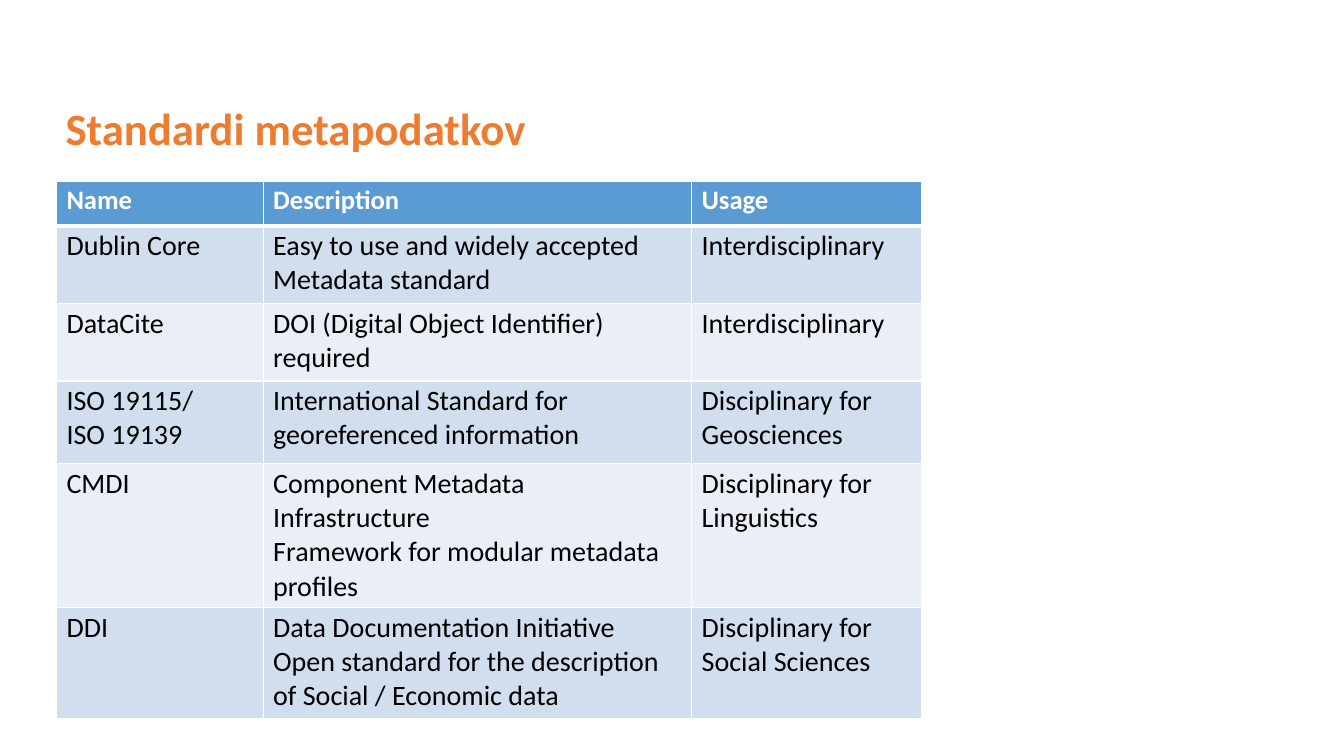
from typing import NamedTuple

import lxml.etree
import pptx
import pptx.dml.color
import pptx.enum.text
import pptx.oxml.ns
import pptx.table
import pptx.text.text
import pptx.util

Inches = pptx.util.Inches
Pt = pptx.util.Pt
RGBColor = pptx.dml.color.RGBColor

FONT = "Calibri"
ORANGE = RGBColor(0xEC, 0x7C, 0x30)
HEADER_BLUE = RGBColor(0x5B, 0x9B, 0xD4)
BAND_DARK = RGBColor(0xD0, 0xDE, 0xEE)
BAND_LIGHT = RGBColor(0xE9, 0xEE, 0xF7)
WHITE = RGBColor(0xFF, 0xFF, 0xFF)
BLACK = RGBColor(0, 0, 0)


class Column(NamedTuple):
    width: float
    right_margin: float


class Standard(NamedTuple):
    height: float
    name: str
    description: str
    usage: str


COLUMNS = [Column(2.05, 0.4), Column(4.25, 0.28), Column(2.28, 0)]
HEADINGS = Standard(0.44, "Name", "Description", "Usage")
STANDARDS = [
    Standard(0.77, "Dublin Core",
             "Easy to use and widely accepted Metadata standard", "Interdisciplinary"),
    Standard(0.77, "DataCite",
             "DOI (Digital Object Identifier)\nrequired", "Interdisciplinary"),
    Standard(0.82, "ISO 19115/ ISO 19139",
             "International Standard for georeferenced information",
             "Disciplinary for Geosciences"),
    Standard(1.43, "CMDI",
             "Component Metadata\nInfrastructure\nFramework for modular metadata profiles",
             "Disciplinary for\nLinguistics"),
    Standard(1.1, "DDI",
             "Data Documentation Initiative Open standard for the description "
             "of Social / Economic data",
             "Disciplinary for\nSocial Sciences"),
]


def style_text(frame: pptx.text.text.TextFrame, size: float, color: RGBColor, bold: bool) -> None:
    for paragraph in frame.paragraphs:
        paragraph.font.name = FONT
        paragraph.font.size = Pt(size)
        paragraph.font.bold = bold
        paragraph.font.color.rgb = color


def set_borders(cell: pptx.table._Cell, top: float, bottom: float) -> None:
    """Draw white borders; top and bottom are widths in points, the sides are 1 pt."""
    qn = pptx.oxml.ns.qn
    properties = cell._tc.get_or_add_tcPr()
    widths = {"a:lnL": 1, "a:lnR": 1, "a:lnT": top, "a:lnB": bottom}
    for position, (tag, width) in enumerate(widths.items()):
        line = lxml.etree.Element(qn(tag), w=str(Pt(width)))
        fill = lxml.etree.SubElement(line, qn("a:solidFill"))
        lxml.etree.SubElement(fill, qn("a:srgbClr"), val=str(WHITE))
        properties.insert(position, line)


def add_title(slide, text: str) -> None:
    title = slide.shapes.add_textbox(Inches(0.64), Inches(0.99), Inches(4.62), Inches(0.56))
    frame = title.text_frame
    frame.word_wrap = True
    frame.margin_left = frame.margin_top = Inches(0.01)
    frame.margin_right = frame.margin_bottom = 0
    frame.text = text
    style_text(frame, 32, ORANGE, True)


def add_standards_table(slide) -> None:
    rows = [HEADINGS, *STANDARDS]
    table = slide.shapes.add_table(
        len(rows), len(COLUMNS), Inches(0.56), Inches(1.8),
        Inches(sum(column.width for column in COLUMNS)),
        Inches(sum(row.height for row in rows))).table
    table.horz_banding = False
    for index, column in enumerate(COLUMNS):
        table.columns[index].width = Inches(column.width)
    for row_index, row in enumerate(rows):
        table.rows[row_index].height = Inches(row.height)
        is_header = row_index == 0
        band = BAND_DARK if row_index % 2 else BAND_LIGHT
        for column_index, text in enumerate((row.name, row.description, row.usage)):
            cell = table.cell(row_index, column_index)
            cell.text = text
            cell.margin_left = Inches(0.1)
            cell.margin_right = Inches(COLUMNS[column_index].right_margin)
            cell.margin_top = Inches(0.03)
            cell.margin_bottom = 0
            cell.vertical_anchor = pptx.enum.text.MSO_ANCHOR.TOP
            cell.fill.solid()
            cell.fill.fore_color.rgb = HEADER_BLUE if is_header else band
            style_text(cell.text_frame, 19 if is_header else 20,
                       WHITE if is_header else BLACK, is_header)
            set_borders(cell, top=3 if row_index == 1 else 1, bottom=3 if is_header else 1)


def main() -> None:
    presentation = pptx.Presentation()
    presentation.slide_width = Inches(13.33)
    presentation.slide_height = Inches(7.5)
    slide = presentation.slides.add_slide(presentation.slide_layouts[6])
    add_standards_table(slide)
    add_title(slide, "Standardi metapodatkov")
    presentation.save("out.pptx")


if __name__ == "__main__":
    main()
